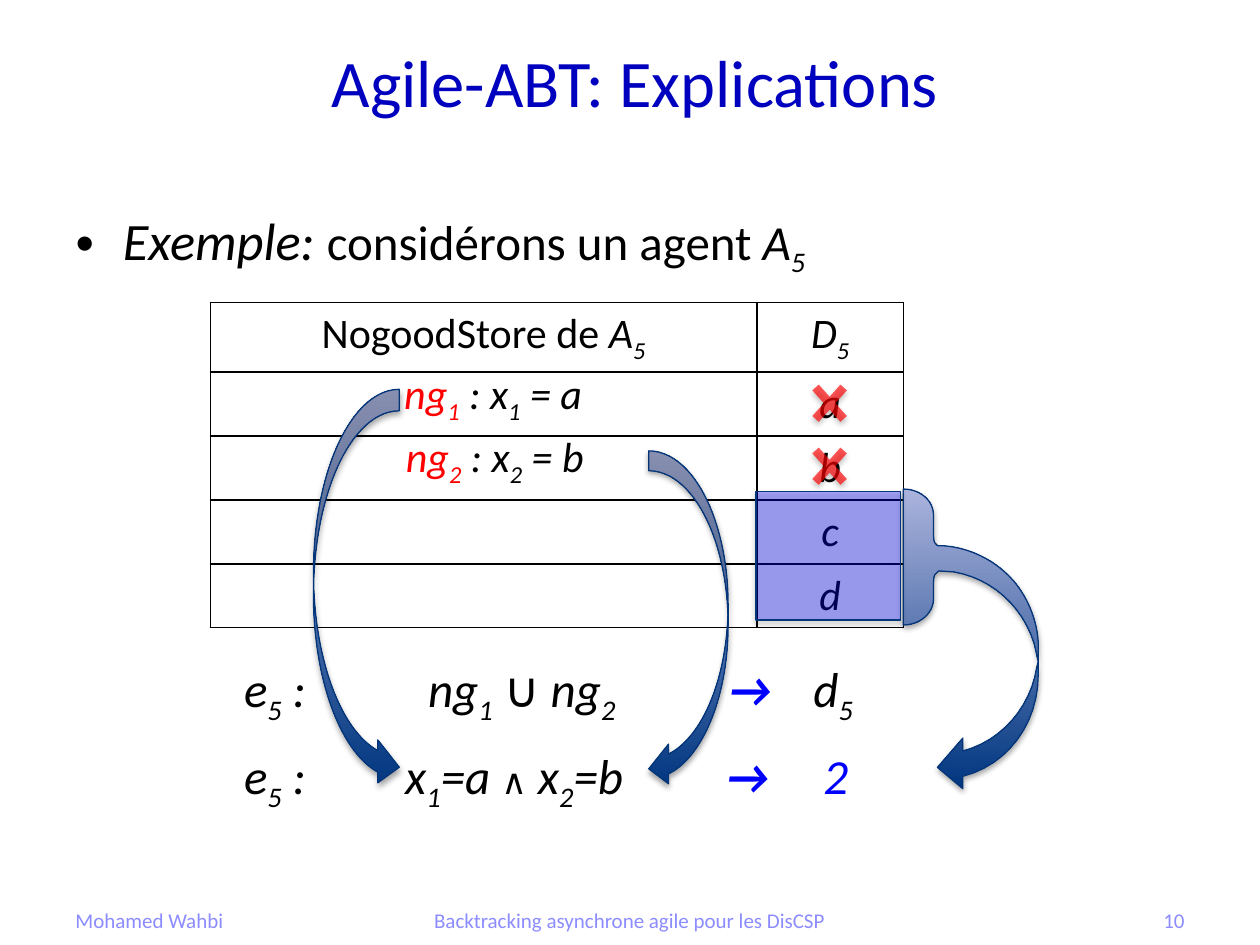
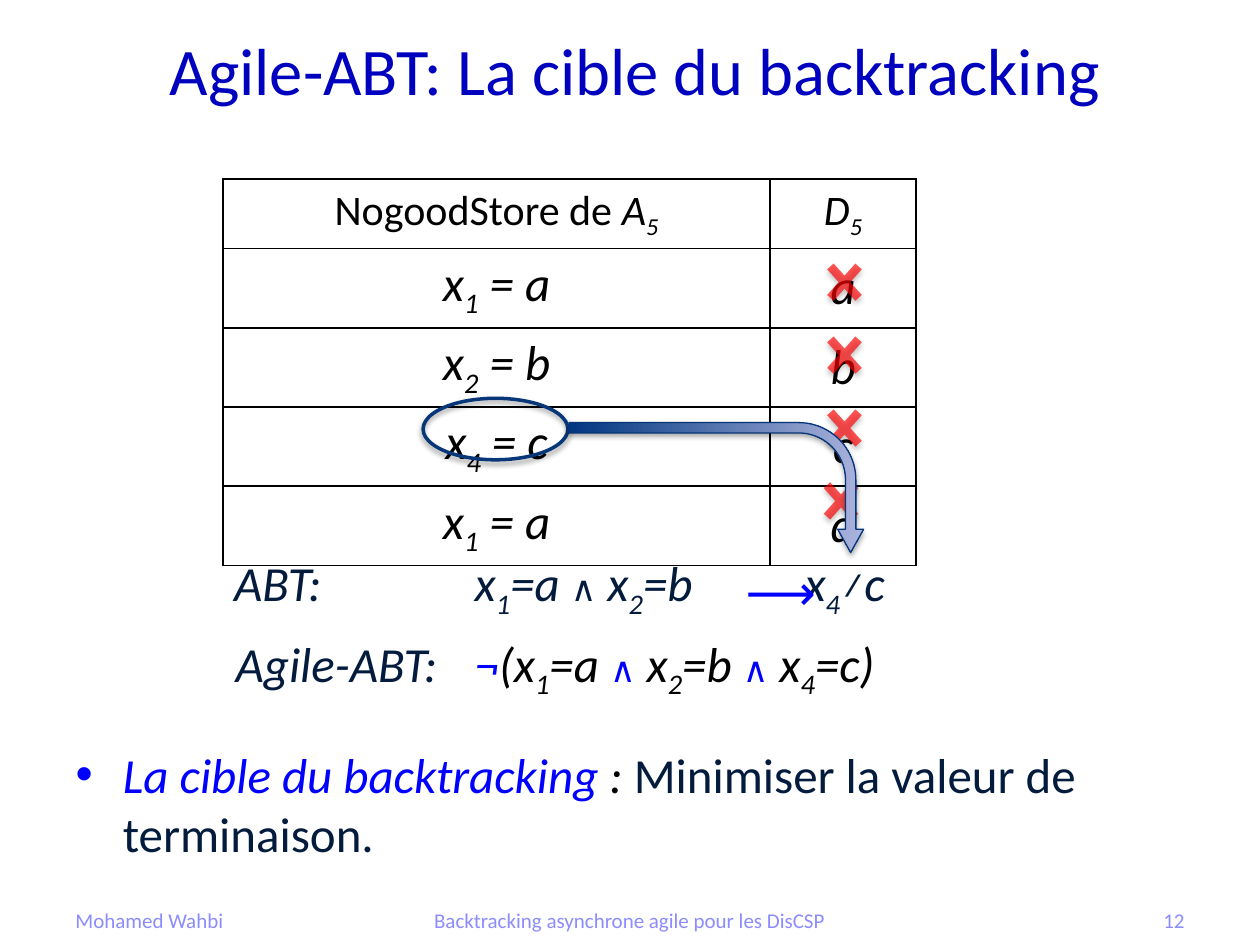
"""Build two slides on Agile-ABT explanations and backtracking targets."""
from lxml.etree import SubElement
from pptx import Presentation
from pptx.dml.color import RGBColor
from pptx.enum.shapes import MSO_SHAPE
from pptx.enum.text import MSO_ANCHOR, MSO_AUTO_SIZE, PP_ALIGN
from pptx.oxml.ns import qn
from pptx.util import Cm, Pt

HUES = {"title": "0000BF", "ink": "000000", "navy": "031B3C", "blue": "0000FF",
        "red": "FF0000", "foot": "8C8CFF", "deep": "003680", "pale": "ABB3DC",
        "edge": "043579", "ring": "073779"}
FONT = "Calibri"
LEFT, MID, RIGHT = PP_ALIGN.LEFT, PP_ALIGN.CENTER, PP_ALIGN.RIGHT
BLUE = {"hue": "blue"}
RED = {"hue": "red"}
PLAIN = {"slant": False}
HEAD = [[("NogoodStore de ", PLAIN), ("A_5", {})], [("D_5", {})]]
HOOK = [(18.54, 9.86, 18.82, 10.08, 18.82, 10.39), (18.82, 10.74),
        (18.82, 10.82, 18.82, 10.9, 18.85, 10.95), (18.9, 11),
        (19.48, 11, 20.07, 11.28, 20.45, 11.73),
        (20.73, 12.07, 20.9, 12.5, 20.93, 12.93), (20.93, 13.61),
        (20.93, 14.58, 20.32, 15.42, 19.41, 15.65), (19.41, 15.9),
        (18.9, 15.47), (19.41, 14.88), (19.41, 15.14),
        (20.19, 14.94, 20.78, 14.25, 20.9, 13.46), (20.93, 13.34),
        (20.85, 12.98), (20.62, 12.22, 19.99, 11.66, 19.23, 11.53),
        (18.92, 11.51), (18.85, 11.58),
        (18.82, 11.63, 18.82, 11.71, 18.82, 11.79), (18.82, 12.07),
        (18.82, 12.37, 18.54, 12.6, 18.21, 12.6)]


def tone(name):
    return RGBColor.from_string(HUES[name])


def trace(start, parts, steps=12):
    dots, last = [], start
    for part in parts:
        if len(part) == 2:
            dots.append(part)
        else:
            for n in range(1, steps + 1):
                t = n / steps
                u = 1 - t
                dots.append(tuple(
                    u**3 * last[k] + 3 * u * u * t * part[k]
                    + 3 * u * t * t * part[k + 2] + t**3 * part[k + 4]
                    for k in (0, 1)))
        last = part[-2:]
    return dots


class Deck:
    def __init__(self):
        self.show = Presentation()
        self.show.slide_width, self.show.slide_height = Cm(25.4), Cm(19.05)
        self.slide = None

    def page(self, title, top, high, number):
        self.slide = self.show.slides.add_slide(self.show.slide_layouts[1])
        head = self.slide.shapes.title
        self.place(head, (0.74, top, 24.13, high))
        head.text_frame.text = title
        self.style(head.text_frame.paragraphs[0].runs[0], 38, "title", False)
        for text, left, wide, align in (
                ("Mohamed Wahbi", 1.27, 5.92, LEFT),
                ("Backtracking asynchrone agile pour les DisCSP", 6.88, 11.63, MID),
                (number, 18.21, 5.92, RIGHT)):
            box = self.text((left, 18.03, wide, 1.02),
                            [(text, {"hue": "foot", **PLAIN})], 12, align)
            box.text_frame.auto_size = MSO_AUTO_SIZE.NONE
            box.text_frame.vertical_anchor = MSO_ANCHOR.MIDDLE

    def place(self, shape, area):
        shape.left, shape.top, shape.width, shape.height = map(Cm, area)

    def style(self, run, size, hue="ink", slant=True, bold=False):
        font = run.font
        font.name, font.size = FONT, Pt(size)
        font.italic, font.bold = slant, bold
        font.color.rgb = tone(hue)

    def rich(self, par, parts, size):
        """Write parts into a paragraph; the sign after each _ is set low."""
        for text, look in parts:
            look = {"size": size, **look}
            first, *rest = text.split("_")
            bits = [(first, False)]
            for bit in rest:
                bits += [(bit[0], True), (bit[1:], False)]
            for bit, low in bits:
                if bit:
                    run = par.add_run()
                    run.text = bit
                    self.style(run, **look)
                    if low:
                        run.font._element.set("baseline", "-25000")

    def body(self, area, parts):
        hold = self.slide.placeholders[1]
        self.place(hold, area)
        hold.text_frame.auto_size = MSO_AUTO_SIZE.NONE
        self.rich(hold.text_frame.paragraphs[0], parts, 28)

    def text(self, area, parts, size=28, align=LEFT, tabs=()):
        box = self.slide.shapes.add_textbox(*map(Cm, area))
        frame = box.text_frame
        frame.word_wrap = True
        frame.auto_size = MSO_AUTO_SIZE.SHAPE_TO_FIT_TEXT
        par = frame.paragraphs[0]
        par.alignment = align
        if tabs:
            stops = SubElement(par._p.get_or_add_pPr(), qn("a:tabLst"))
            for tab in tabs:
                SubElement(stops, qn("a:tab"), pos=str(Cm(tab)), algn="l")
        self.rich(par, parts, size)
        return box

    def table(self, left, top, rows, size):
        wide = (11.02, 2.95)
        grid = self.slide.shapes.add_table(
            len(rows), 2, Cm(left), Cm(top), Cm(sum(wide)), Cm(1.22 * len(rows))).table
        grid.first_row = grid.horz_banding = False
        for col, width in zip(grid.columns, wide):
            col.width = Cm(width)
        for r, row in enumerate(rows):
            for c, parts in enumerate(row):
                cell = grid.cell(r, c)
                cell.vertical_anchor = MSO_ANCHOR.MIDDLE
                par = cell.text_frame.paragraphs[0]
                par.alignment = MID
                self.rich(par, parts, size if r else 24)
                self.border(cell)
                cell.fill.background()

    def border(self, cell):
        props = cell._tc.get_or_add_tcPr()
        for side in ("lnL", "lnR", "lnT", "lnB"):
            line = SubElement(props, qn("a:" + side), w=str(Pt(1)))
            fill = SubElement(line, qn("a:solidFill"))
            SubElement(fill, qn("a:srgbClr"), val=HUES["ink"])

    def shade(self, shape, alpha=35):
        shape.shadow.inherit = False
        glow = SubElement(shape._element.spPr.find(qn("a:effectLst")),
                          qn("a:outerShdw"), blurRad="40000", dist="23000",
                          dir="5400000", rotWithShape="0")
        hue = SubElement(glow, qn("a:srgbClr"), val=HUES["ink"])
        SubElement(hue, qn("a:alpha"), val=str(alpha * 1000))

    def edge(self, shape, hue="edge", size=0.75):
        shape.line.color.rgb = tone(hue)
        shape.line.width = Pt(size)

    def blend(self, shape):
        shape.fill.gradient()
        shape.fill.gradient_angle = 90
        for stop, hue in zip(shape.fill.gradient_stops, ("deep", "pale")):
            stop.color.rgb = tone(hue)
        self.edge(shape)
        self.shade(shape)

    def shape(self, kind, area, adjust=()):
        item = self.slide.shapes.add_shape(kind, *map(Cm, area))
        for n, value in enumerate(adjust):
            item.adjustments[n] = value
        return item

    def tint(self, shape, hue, alpha):
        shape.fill.solid()
        shape.fill.fore_color.rgb = tone(hue)
        mark = shape._element.spPr.find(qn("a:solidFill")).find(qn("a:srgbClr"))
        SubElement(mark, qn("a:alpha"), val=str(alpha * 1000))
        self.shade(shape)

    def cross(self, left, top):
        item = self.shape(MSO_SHAPE.MATH_MULTIPLY, (left, top, 1.09, 1.22), [0.16])
        item.line.fill.background()
        self.tint(item, "red", 66)

    def arrow(self, kind, area, adjust=(), turn=0, flip=False):
        item = self.shape(kind, area, adjust)
        item.rotation = turn
        if flip:
            item._element.spPr.find(qn("a:xfrm")).set("flipH", "1")
        self.blend(item)

    def block(self, area):
        item = self.shape(MSO_SHAPE.RECTANGLE, area)
        self.tint(item, "blue", 33)
        self.edge(item)

    def ring(self, area):
        item = self.shape(MSO_SHAPE.OVAL, area)
        item.fill.background()
        self.edge(item, "ring", 2)
        self.shade(item, 38)

    def outline(self, start, parts):
        pen = self.slide.shapes.build_freeform(*map(Cm, start))
        pen.add_line_segments([(Cm(x), Cm(y)) for x, y in trace(start, parts)])
        self.blend(pen.convert_to_shape())


def explain(deck):
    deck.page("Agile-ABT: Explications", 0.05, 3.18, "10")
    deck.body((1.27, 4.06, 22.86, 1.65),
              [("Exemple: ", {"size": 30}), ("considérons un agent ", PLAIN), ("A_5", {})])
    deck.table(4.24, 6.1, [HEAD] + [[[], [(v, {})]] for v in "abcd"], 24)
    deck.text((7.9, 7.29, 4.45, 1.27), [("ng_1", RED), (" : x_1 = a", {})], 24)
    deck.text((7.75, 8.56, 4.45, 1.27), [("ng_2", RED), (" : x_2 = b", {})], 24, MID)
    for n in range(2):
        deck.cross(16.18, 7.52 + 1.27 * n)
    deck.text((4.67, 13.16, 13.54, 1.45),
              [("e_5 :\tng_1 ∪ ng_2\t", {}), ("→", {"bold": True, **BLUE}),
               ("\td_5", {})], tabs=(3.71, 9.75, 11.48))
    deck.arrow(MSO_SHAPE.CURVED_RIGHT_ARROW, (6.32, 7.85, 1.73, 8.05))
    deck.arrow(MSO_SHAPE.CURVED_RIGHT_ARROW, (13.08, 9.09, 1.6, 6.81), flip=True)
    deck.text((4.67, 14.91, 13.54, 1.45),
              [("e_5 :\tx_1=a ", {}), ("∧", {"size": 20}), (" x_2=b\t", {}),
               ("→", {"bold": True, **BLUE}), ("\t2", BLUE)], tabs=(3.25, 9.7, 11.68))
    deck.outline((18.21, 9.86), HOOK)
    deck.block((15.24, 9.91, 2.92, 2.59))


def target(deck):
    navy = {"hue": "navy"}
    wedge = ("∧", {"size": 20, **BLUE})
    deck.page("Agile-ABT: La cible du backtracking", 0, 2.79, "12")
    deck.body((1.27, 14.88, 22.86, 2.46),
              [("La cible du backtracking ", BLUE), (": ", {}),
               ("Minimiser la valeur de terminaison.", {**navy, **PLAIN})])
    goods = ("x_1 = a", "x_2 = b", "x_4 = c", "x_1 = a")
    deck.table(4.5, 3.61, [HEAD] + [[[(g, {})], [(v, {})]] for g, v in zip(goods, "abcd")], 28)
    for n, left in enumerate((16.48, 16.48, 16.48, 16.41)):
        deck.cross(left, 5.08 + 1.47 * n)
    deck.text((9.32, 12.65, 11, 1.45),
              [("¬", BLUE), ("(x_1=a ", {}), wedge, (" x_2=b ", {}), wedge, (" x_4=c)", {})])
    deck.text((9.32, 11.02, 9.78, 1.45),
              [("x_1=a ", navy), ("∧", {"size": 20, **navy}), (" x_2=b\tx_4≠c", navy)],
              tabs=(6.65,))
    deck.ring((8.53, 8.03, 2.92, 1.24))
    deck.arrow(MSO_SHAPE.BENT_ARROW, (13.13, 6.86, 2.62, 5.94),
               (0.08, 0.1, 0.18, 0.44), turn=90)
    deck.text((4.47, 11.02, 3.18, 1.45), [("ABT:", navy)])
    deck.text((4.5, 12.65, 4.85, 1.45), [("Agile-ABT:", navy)])
    deck.text((14.78, 11.2, 1.7, 1.45), [("⟶", BLUE)])


def main():
    deck = Deck()
    explain(deck)
    target(deck)
    deck.show.save("out.pptx")


if __name__ == "__main__":
    main()
